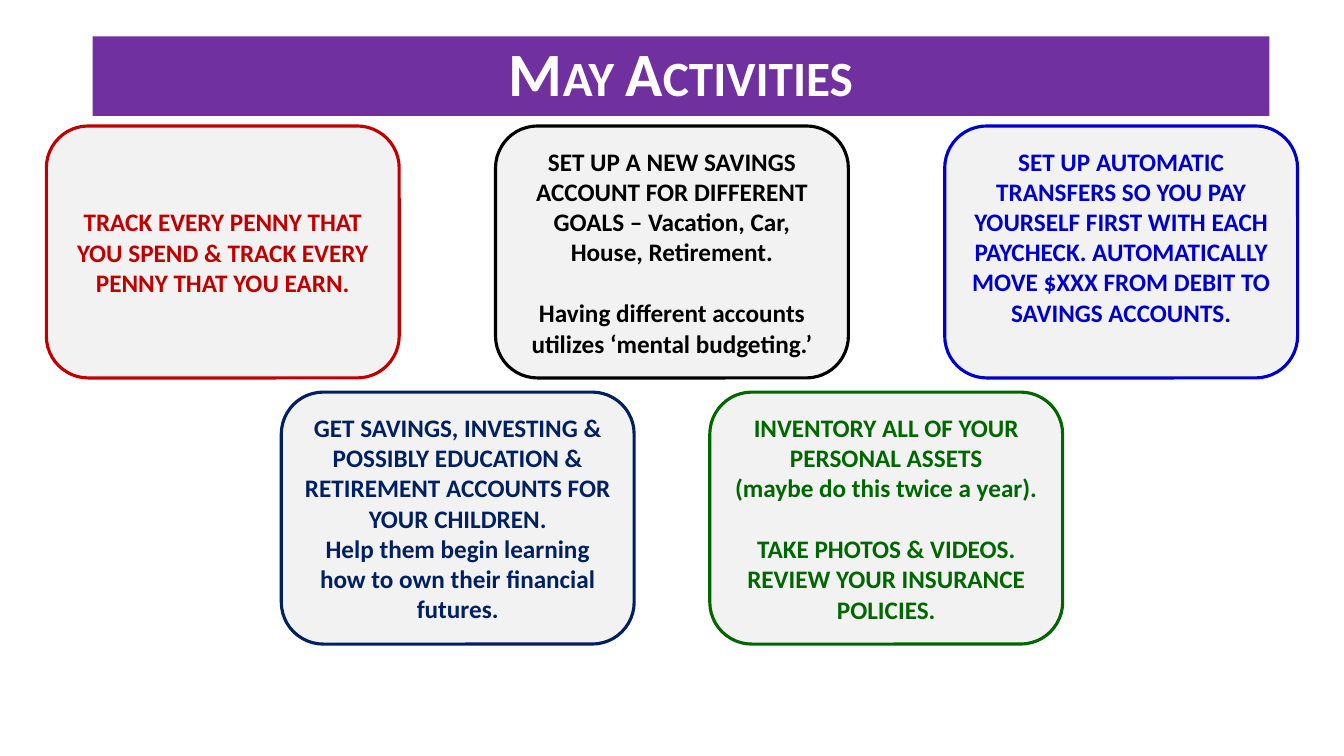
from pptx import Presentation
from pptx.dml.color import RGBColor
from pptx.enum.shapes import MSO_SHAPE as Shape
from pptx.enum.text import MSO_ANCHOR as Anchor, PP_ALIGN as Align
from pptx.util import Inches, Pt

THEME = {
    "font": "Calibri",
    "banner": "7030A0", "banner_text": "FFFFFF", "card": "F2F2F2",
    "red": "C00000", "black": "000000", "blue": "0000CC",
    "navy": "002060", "green": "006600",
    "title_size": 44, "card_size": 18, "outline": 2.25,
}


def color(name):
    return RGBColor.from_string(THEME[name])


def write(shape, paragraphs, size, ink, gap=0, line_spacing=None, small_caps=False):
    frame = shape.text_frame
    frame.word_wrap = True
    frame.vertical_anchor = Anchor.MIDDLE
    for index, text in enumerate(paragraphs):
        paragraph = frame.paragraphs[0] if index == 0 else frame.add_paragraph()
        paragraph.text = text
        paragraph.alignment = Align.CENTER
        paragraph.line_spacing = line_spacing
        if index:
            paragraph.space_before = Pt(gap)
        for run in paragraph.runs:
            font = run.font
            font.name, font.size, font.bold = THEME["font"], Pt(size), True
            font.color.rgb = color(ink)
            if small_caps:
                run._r.get_or_add_rPr().set("cap", "small")


presentation = Presentation()
presentation.slide_width, presentation.slide_height = Inches(13.33), Inches(7.5)
slide = presentation.slides.add_slide(presentation.slide_layouts[6])

# Title banner
banner = slide.shapes.add_shape(
    Shape.RECTANGLE, Inches(0.92), Inches(0.36), Inches(11.67), Inches(0.79))
banner.shadow.inherit = False
banner.fill.solid()
banner.fill.fore_color.rgb = color("banner")
banner.line.fill.background()
write(banner, ["May Activities"], THEME["title_size"], "banner_text",
      line_spacing=0.9, small_caps=True)

# Activity cards: each row has a left edge, a top, a column step and its cards
CARD_WIDTH, CARD_HEIGHT = 3.5, 2.5
BLANK_LINE = 22  # points, one line of card text
rows = [
    (0.46, 1.25, 4.455, [
        ("red", ["TRACK EVERY PENNY THAT YOU SPEND & TRACK EVERY PENNY THAT YOU EARN."], 0),
        ("black", ["SET UP A NEW SAVINGS ACCOUNT FOR DIFFERENT GOALS – Vacation, Car, "
                   "House, Retirement.",
                   "Having different accounts utilizes ‘mental budgeting.’"], 0),
        ("blue", ["SET UP AUTOMATIC TRANSFERS SO YOU PAY YOURSELF FIRST WITH EACH "
                  "PAYCHECK. AUTOMATICALLY MOVE $XXX FROM DEBIT TO SAVINGS ACCOUNTS."],
         BLANK_LINE),
    ]),
    (2.79, 3.89, 4.25, [
        ("navy", ["GET SAVINGS, INVESTING & POSSIBLY EDUCATION & RETIREMENT ACCOUNTS "
                  "FOR YOUR CHILDREN.\nHelp them begin learning how to own their "
                  "financial futures."], 0),
        ("green", ["INVENTORY ALL OF YOUR PERSONAL ASSETS\n(maybe do this twice a year).",
                   "TAKE PHOTOS & VIDEOS. REVIEW YOUR INSURANCE POLICIES."], 0),
    ]),
]
for left, top, step, cards in rows:
    for column, (ink, paragraphs, room_below) in enumerate(cards):
        card = slide.shapes.add_shape(
            Shape.ROUNDED_RECTANGLE, Inches(left + column * step), Inches(top),
            Inches(CARD_WIDTH), Inches(CARD_HEIGHT))
        card.shadow.inherit = False
        card.fill.solid()
        card.fill.fore_color.rgb = color("card")
        card.line.color.rgb = color(ink)
        card.line.width = Pt(THEME["outline"])
        card.text_frame.margin_bottom = Inches(0.05) + Pt(room_below)
        write(card, paragraphs, THEME["card_size"], ink, gap=BLANK_LINE)

presentation.save("out.pptx")
